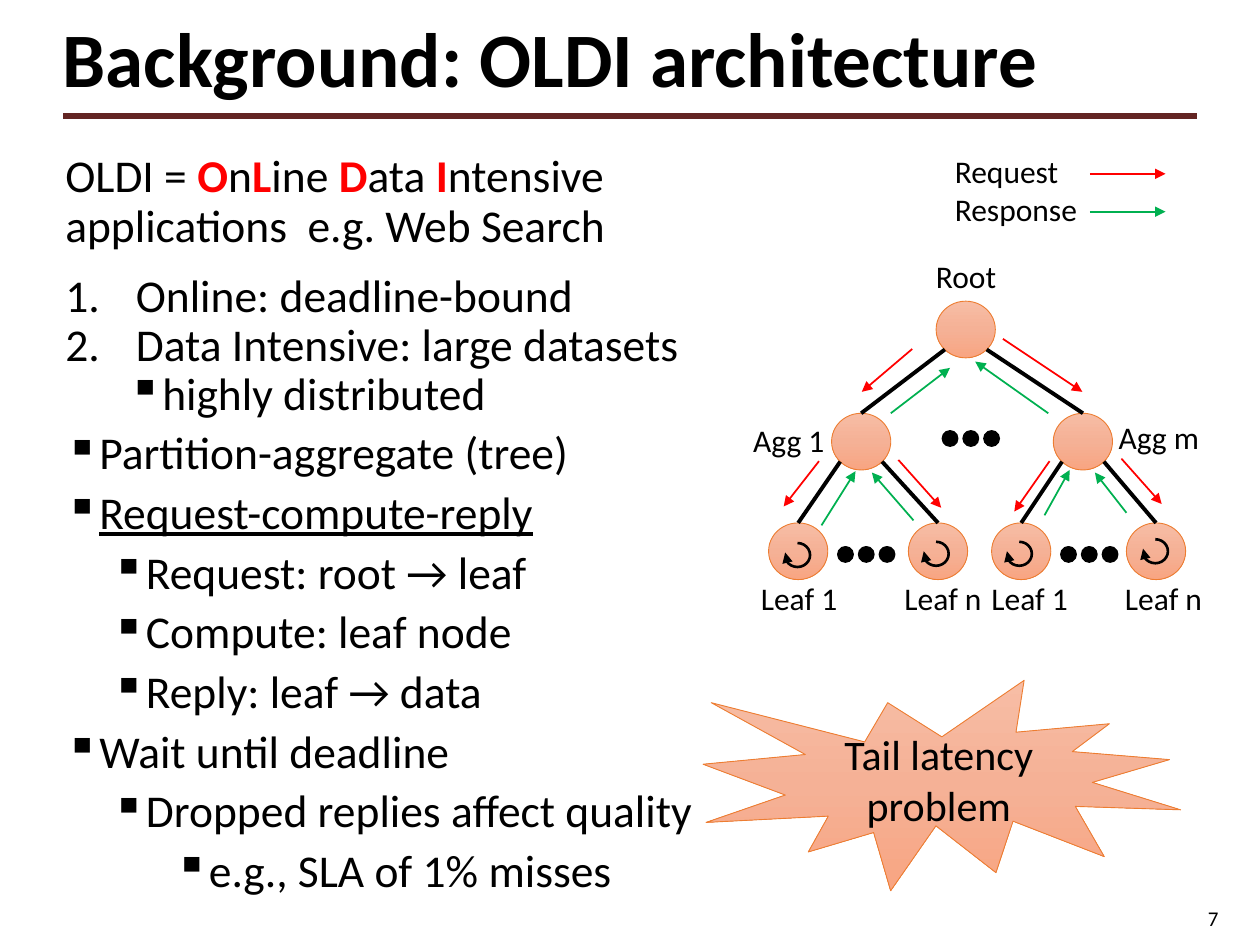
from copy import deepcopy
from math import sqrt
from typing import NamedTuple

from lxml.etree import SubElement
from pptx import Presentation
from pptx.dml.color import RGBColor
from pptx.enum.shapes import MSO_CONNECTOR, MSO_SHAPE as Kind
from pptx.enum.text import MSO_ANCHOR as Anchor, MSO_AUTO_SIZE as Auto, PP_ALIGN as Align
from pptx.oxml.ns import qn
from pptx.util import Inches, Pt

BLACK = RGBColor(0x00, 0x00, 0x00)
RED = RGBColor(0xFF, 0x00, 0x00)
GREEN = RGBColor(0x00, 0xB0, 0x50)
MAROON = RGBColor(0x63, 0x25, 0x23)
ORANGE = RGBColor(0xED, 0x7D, 0x31)
PEACH = ((0, RGBColor(0xF7, 0xBD, 0xA5)),
         (0.5, RGBColor(0xF5, 0xB1, 0x96)),
         (1, RGBColor(0xF8, 0xA5, 0x82)))
FONT = "Calibri"
WIDE, HIGH = 0.47, 0.45  # node size
DOT, STEP = 0.12, 0.165  # dot size and pitch


class Item(NamedTuple):
    text: str
    mark: str = ""
    left: float = 0
    hang: float = 0
    gap: int = 6
    level: int = 0
    under: bool = False


class Node(NamedTuple):
    x: float
    y: float

    def top(self) -> tuple:
        return self.x + WIDE / 2, self.y

    def foot(self, side: int) -> tuple:
        """Lower left (-1) or lower right (1) point of the circle."""
        k = 0.5 / sqrt(2)
        return self.x + WIDE * (0.5 + side * k), self.y + HIGH * (0.5 + k)


class Label(NamedTuple):
    text: str
    x: float
    y: float
    w: float


class Arrow(NamedTuple):
    start: tuple
    end: tuple
    color: RGBColor


ITEMS = (
    Item("OLDI = *O*n*L*ine *D*ata *I*ntensive applications  e.g. Web Search", gap=0),
    Item("Online: deadline-bound", "1.", 0.56, 0.56, 12),
    Item("Data Intensive: large datasets", "1.", 0.56, 0.56, 0),
    Item("highly distributed", "▪", 0.75, 0.25, 0, 1),
    Item("Partition-aggregate (tree)", "▪", 0.25, 0.25),
    Item("Request-compute-reply", "▪", 0.25, 0.25, under=True),
    Item("Request: root → leaf", "▪", 0.62, 0.25, level=1),
    Item("Compute: leaf node", "▪", 0.62, 0.25, level=1),
    Item("Reply: leaf → data", "▪", 0.62, 0.25, level=1),
    Item("Wait until deadline", "▪", 0.12, 0.25),
    Item("Dropped replies affect quality", "▪", 0.62, 0.25, level=1),
    Item("e.g., SLA of 1% misses", "▪", 1.12, 0.25, level=2),
)
ROOT = Node(7.43, 2.39)
AGGS = (Node(6.6, 3.28), Node(8.36, 3.28))
LEAVES = tuple(Node(x, 4.15) for x in (6.1, 7.21, 7.87, 8.94))
LABELS = (
    Label("Root", 7.33, 1.99, 0.68),
    Label("Agg 1", 5.88, 3.29, 0.77), Label("Agg m", 8.78, 3.27, 0.85),
    Label("Leaf 1", 5.94, 4.55, 0.82), Label("Leaf n", 7.08, 4.55, 0.82),
    Label("Leaf 1", 7.77, 4.55, 0.82), Label("Leaf n", 8.83, 4.55, 0.82),
)
ARROWS = (
    # Root and aggregators
    Arrow((7.24, 2.77), (6.84, 3.11), RED), Arrow((7.96, 2.69), (8.59, 3.11), RED),
    Arrow((7.07, 3.28), (7.54, 2.92), GREEN), Arrow((8.32, 3.28), (7.74, 2.87), GREEN),
    # Aggregators and leaves
    Arrow((6.5, 3.66), (6.22, 4.02), RED), Arrow((7.13, 3.65), (7.47, 4.03), RED),
    Arrow((8.33, 3.66), (8.05, 4.06), RED), Arrow((8.9, 3.64), (9.22, 4), RED),
    Arrow((6.52, 4.17), (6.79, 3.74), GREEN), Arrow((7.25, 4.13), (6.92, 3.75), GREEN),
    Arrow((8.29, 4.09), (8.49, 3.73), GREEN), Arrow((8.94, 4.07), (8.69, 3.75), GREEN),
    # Legend
    Arrow((8.65, 1.38), (9.25, 1.38), RED), Arrow((8.65, 1.68), (9.25, 1.68), GREEN),
)
DOTS = ((7.48, 3.42), (6.65, 4.34), (8.42, 4.34))
LOOPS = ((6.23, 4.31), (7.33, 4.3), (7.99, 4.3), (9.07, 4.28))


def style(font, size: float, color=BLACK, bold=False) -> None:
    font.name, font.size, font.bold = FONT, Pt(size), bold
    font.color.rgb = color


def add_text(slide, text: str, box: tuple, size: float, bold=False, wrap=True):
    frame = slide.shapes.add_textbox(*map(Inches, box)).text_frame
    frame.word_wrap = wrap
    frame.text = text
    for para in frame.paragraphs:
        for run in para.runs:
            style(run.font, size, bold=bold)
    return frame


def add_tip(line) -> None:
    SubElement(line.line._get_or_add_ln(), qn("a:tailEnd"), type="triangle")


def add_line(slide, start: tuple, end: tuple, color: RGBColor, width: float):
    line = slide.shapes.add_connector(
        MSO_CONNECTOR.STRAIGHT, *map(Inches, (*start, *end)))
    line.line.color.rgb, line.line.width = color, Pt(width)
    SubElement(line._element.spPr, qn("a:effectLst"))
    return line


def add_form(shapes, kind: Kind, box: tuple, color: RGBColor, width: float):
    form = shapes.add_shape(kind, *map(Inches, box))
    form.shadow.inherit = False
    form.line.color.rgb, form.line.width = color, Pt(width)
    return form


def add_peach(slide, kind: Kind, box: tuple):
    form = add_form(slide.shapes, kind, box, ORANGE, 0.5)
    form.fill.gradient()
    form.fill.gradient_angle = 270
    stops = form._element.spPr.find(".//" + qn("a:gsLst"))
    stops.insert(1, deepcopy(stops[0]))
    for stop, (place, color) in zip(form.fill.gradient_stops, PEACH):
        stop.position, stop.color.rgb = place, color
    return form


def add_item(para, item: Item) -> None:
    para.line_spacing, para.space_before = 0.9, Pt(item.gap)
    para.level = item.level
    # Starred parts are red and bold
    for i, part in enumerate(item.text.split("*")):
        run = para.add_run()
        run.text = part
        style(run.font, 26, RED if i % 2 else BLACK, bool(i % 2))
        run.font.underline = item.under
    if item.mark:
        props = para._p.get_or_add_pPr()
        props.set("marL", str(Inches(item.left)))
        props.set("indent", str(-Inches(item.hang)))
        SubElement(SubElement(props, qn("a:buClr")), qn("a:srgbClr"), val=str(BLACK))
        if item.mark == "1.":
            SubElement(props, qn("a:buAutoNum"), type="arabicPeriod")
        else:
            SubElement(props, qn("a:buChar"), char=item.mark)


def main() -> None:
    deck = Presentation()
    deck.slide_width, deck.slide_height = Inches(10), Inches(7.5)
    slide = deck.slides.add_slide(deck.slide_layouts[6])

    # Title, rule and page number
    add_line(slide, (0.5, 0.92), (9.5, 0.92), MAROON, 3)
    title = add_text(slide, "Background: OLDI architecture", (0.4, 0.08, 9.27, 0.83), 44, True)
    title.vertical_anchor = Anchor.MIDDLE
    title.paragraphs[0].line_spacing = 0.9
    page = add_text(slide, "7", (8.97, 7.14, 0.8, 0.3), 12)
    page.vertical_anchor = Anchor.MIDDLE
    page.paragraphs[0].alignment = Align.RIGHT

    # Bullet list
    body = add_text(slide, "", (0.42, 1.17, 5.46, 6.08), 26)
    for i, item in enumerate(ITEMS):
        add_item(body.add_paragraph() if i else body.paragraphs[0], item)

    # Tree
    for node in (ROOT, *AGGS, *LEAVES):
        add_peach(slide, Kind.OVAL, (*node, WIDE, HIGH))
    for head, kids in ((ROOT, AGGS), (AGGS[0], LEAVES[:2]), (AGGS[1], LEAVES[2:])):
        for side, kid in zip((-1, 1), kids):
            add_line(slide, head.foot(side), kid.top(), BLACK, 2.25)
    for arrow in ARROWS:
        add_tip(add_line(slide, *arrow, 1))
    for text, x, y, w in LABELS:
        add_text(slide, text, (x, y, w, 0.4), 18, wrap=False).auto_size = Auto.SHAPE_TO_FIT_TEXT
    add_text(slide, "Request\nResponse", (7.48, 1.16, 1.2, 0.71), 18)

    # Dots between siblings
    for x, y in DOTS:
        group = slide.shapes.add_group_shape()
        for i in range(3):
            dot = add_form(group.shapes, Kind.OVAL, (x + i * STEP, y, DOT, DOT), BLACK, 1)
            dot.fill.solid()
            dot.fill.fore_color.rgb = BLACK

    # Compute loops in the leaves
    for x, y in LOOPS:
        loop = add_form(slide.shapes, Kind.ARC, (x, y, 0.2, 0.19), BLACK, 1.5)
        loop.fill.background()
        loop.adjustments[0], loop.adjustments[1] = 162, 115
        add_tip(loop)

    # Callout
    burst = add_peach(slide, Kind.EXPLOSION1, (5.58, 5.4, 3.79, 1.67))
    frame = burst.text_frame
    frame.word_wrap, frame.vertical_anchor = True, Anchor.MIDDLE
    frame.text = "Tail latency problem"
    frame.paragraphs[0].alignment = Align.CENTER
    style(frame.paragraphs[0].runs[0].font, 24)

    deck.save("out.pptx")


if __name__ == "__main__":
    main()
